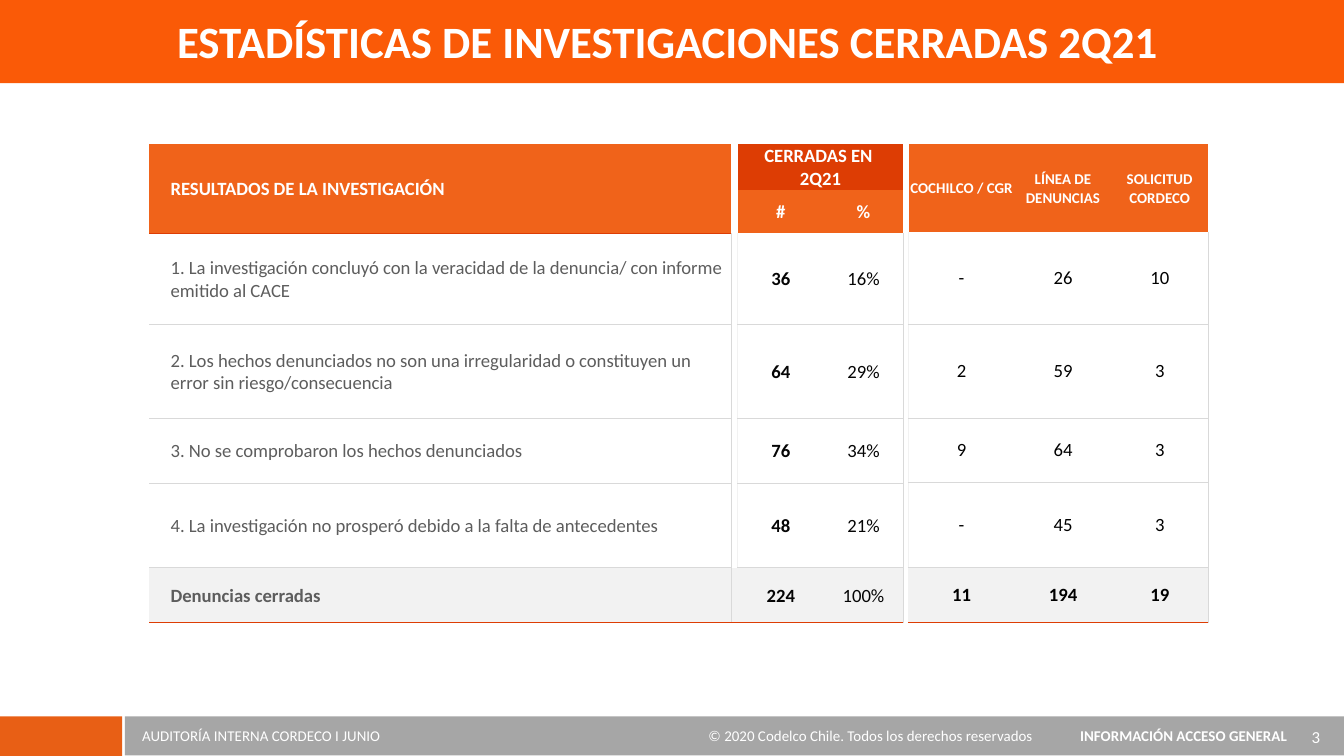
from dataclasses import dataclass

from lxml import etree
from pptx import Presentation
from pptx.dml.color import RGBColor
from pptx.enum.shapes import MSO_SHAPE
from pptx.enum.text import MSO_ANCHOR, PP_ALIGN
from pptx.oxml.ns import qn
from pptx.util import Inches, Pt

RECTANGLE = MSO_SHAPE.RECTANGLE
LEFT, CENTER = PP_ALIGN.LEFT, PP_ALIGN.CENTER
TOP, MIDDLE = MSO_ANCHOR.TOP, MSO_ANCHOR.MIDDLE
FONT = "Calibri"
WHITE, BLACK, INK, SLATE = "FFFFFF", "000000", "050505", "5D5D5D"
ORANGE, RED, PALE = "F0631A", "DD3D04", "F2F2F2"
GRID, ACCENT, TOTAL = ("D9D9D9", 0.25), (RED, 0.25), (RED, 0.75)
PALE_EDGE, HEADER_EDGE = (PALE, 0.75), ("BFBFBF", 0.5)
BODY_HEIGHTS = [0.68, 0.7, 0.48, 0.63, 0.41]


@dataclass
class Column:
    """One table column: its width, its body texts and how they look."""
    width: float
    texts: list[str]
    color: str = BLACK
    bold: bool = False
    bold_total: bool = True
    align: PP_ALIGN = CENTER
    insets: tuple = (0, 0, 0, 0)
    left: tuple | None = None
    right: tuple | None = None
    first_top: tuple | None = None
    ruled: bool = True


@dataclass
class Header:
    """One header cell, which may span several rows or columns."""
    row: int
    column: int
    text: str
    size: float
    fill: str = ORANGE
    rows: int = 1
    columns: int = 1
    align: PP_ALIGN = CENTER
    insets: tuple = (0.01, 0.01, 0.01, 0)
    right: tuple | None = None
    bottom: tuple | None = None


def rgb(color: str) -> RGBColor:
    """Turn a hex string into a colour."""
    return RGBColor.from_string(color)


def style(paragraph, size: float, color: str, bold: bool, align: PP_ALIGN) -> None:
    """Set the alignment and font of a paragraph."""
    paragraph.alignment = align
    font = paragraph.font
    font.name, font.size, font.bold = FONT, Pt(size), bold
    font.color.rgb = rgb(color)


def add_bar(slide, box: tuple, color: str, opacity: int = 100) -> None:
    """Draw a plain filled rectangle."""
    bar = slide.shapes.add_shape(RECTANGLE, *map(Inches, box))
    bar.shadow.inherit = False
    bar.line.fill.background()
    bar.fill.solid()
    bar.fill.fore_color.rgb = rgb(color)
    if opacity < 100:
        tint = bar.fill._xPr.find(".//" + qn("a:srgbClr"))
        etree.SubElement(tint, qn("a:alpha"), val=str(opacity * 1000))


def add_text(slide, box: tuple, text: str, size: float, align: PP_ALIGN = LEFT,
             bold: bool = False, anchor: MSO_ANCHOR = TOP,
             insets: tuple = (0.1, 0.05, 0.1, 0.05), tabs: tuple = (), ending: str = "") -> None:
    """Add white text, with optional right tab stops and a bold ending."""
    frame = slide.shapes.add_textbox(*map(Inches, box)).text_frame
    frame.word_wrap = True
    frame.vertical_anchor = anchor
    (frame.margin_left, frame.margin_top,
     frame.margin_right, frame.margin_bottom) = map(Inches, insets)
    paragraph = frame.paragraphs[0]
    if tabs:
        stops = etree.SubElement(paragraph._p.get_or_add_pPr(), qn("a:tabLst"))
        for position in tabs:
            etree.SubElement(stops, qn("a:tab"), pos=str(Inches(position)), algn="r")
    paragraph.add_run().text = text
    if ending:
        closing = paragraph.add_run()
        closing.text = ending
        closing.font.bold = True
    style(paragraph, size, WHITE, bold, align)


def fill_cell(cell, text: str, size: float, color: str, bold: bool, align: PP_ALIGN,
              insets: tuple, fill: str, edges: tuple) -> None:
    """Write and paint a cell; edges run left, right, top, bottom."""
    cell.text = text
    cell.vertical_anchor = MIDDLE
    (cell.margin_left, cell.margin_top,
     cell.margin_right, cell.margin_bottom) = map(Inches, insets)
    for paragraph in cell.text_frame.paragraphs:
        style(paragraph, size, color, bold, align)
    cell.fill.solid()
    cell.fill.fore_color.rgb = rgb(fill)
    properties = cell._tc.get_or_add_tcPr()
    for index, (side, edge) in enumerate(zip("LRTB", edges)):
        line = etree.Element(qn(f"a:ln{side}"))
        if edge:
            line.set("w", str(Pt(edge[1])))
            paint = etree.SubElement(line, qn("a:solidFill"))
            etree.SubElement(paint, qn("a:srgbClr"), val=edge[0])
        else:
            line.set("w", "0")
            etree.SubElement(line, qn("a:noFill"))
        properties.insert(index, line)


def add_results(slide, left: float, header_heights: list[float],
                headers: list[Header], columns: list[Column]) -> None:
    """Build a table from its header cells and body columns."""
    heights = header_heights + BODY_HEIGHTS
    width = sum(column.width for column in columns)
    table = slide.shapes.add_table(len(heights), len(columns), Inches(left), Inches(1.07),
                                   Inches(width), Inches(sum(heights))).table
    table.first_row = table.horz_banding = False
    for row, height in zip(table.rows, heights):
        row.height = Inches(height)
    start, last = len(header_heights), len(BODY_HEIGHTS) - 1
    for index, column in enumerate(columns):
        table.columns[index].width = Inches(column.width)
        for row in range(start):
            fill_cell(table.cell(row, index), "", 8, WHITE, True, CENTER,
                      (0, 0, 0, 0), WHITE, (None,) * 4)
        for row, text in enumerate(column.texts):
            is_total = row == last
            rule = GRID if column.ruled else None
            top = rule if row else column.first_top
            fill_cell(table.cell(start + row, index), text, 10, column.color,
                      column.bold_total if is_total else column.bold, column.align,
                      column.insets, PALE if is_total else WHITE,
                      (column.left, column.right, top, TOTAL if is_total else rule))
    for header in headers:
        cell = table.cell(header.row, header.column)
        if header.rows * header.columns > 1:
            cell.merge(table.cell(header.row + header.rows - 1,
                                  header.column + header.columns - 1))
        fill_cell(cell, header.text, header.size, WHITE, True, header.align, header.insets,
                  header.fill, (None, header.right, None, header.bottom))


def main() -> None:
    """Build the slide and save it."""
    deck = Presentation()
    deck.slide_width = Inches(10)
    deck.slide_height = deck.slide_width * 9 // 16
    slide = deck.slides.add_slide(deck.slide_layouts[6])

    add_bar(slide, (0, 5.33, 0.91, 0.3), "E75304", 93)
    add_bar(slide, (0.93, 5.33, 9.07, 0.29), "A6A6A6")
    add_text(slide, (9.53, 5.36, 0.52, 0.3), "3", 9, CENTER)
    add_text(slide, (5.1, 5.36, 4.59, 0.24),
             "\t© 2020 Codelco Chile. Todos los derechos reservados\t", 8,
             tabs=(2.49, 4.38), ending="INFORMACIÓN ACCESO GENERAL")
    add_text(slide, (0.96, 5.36, 1.99, 0.24), "AUDITORÍA INTERNA CORDECO I JUNIO", 8)
    add_bar(slide, (0, -0.01, 10.01, 0.63), "FA5A07")
    add_text(slide, (0.01, 0, 10.01, 0.6), "ESTADÍSTICAS DE INVESTIGACIONES CERRADAS 2Q21",
             24, CENTER, True, MIDDLE, (0, 0, 0.1, 0))

    label_insets, figure_insets = (0.16, 0.01, 0.04, 0), (0.01, 0.01, 0.01, 0)
    results = [
        "1. La investigación concluyó con la veracidad de la denuncia/ con informe emitido al CACE",
        "2. Los hechos denunciados no son una irregularidad o constituyen un error sin "
        "riesgo/consecuencia",
        "3. No se comprobaron los hechos denunciados",
        "4. La investigación no prosperó debido a la falta de antecedentes",
        "Denuncias cerradas",
    ]
    add_results(slide, 1.11, [0.34, 0.32], [
        Header(0, 0, "RESULTADOS DE LA INVESTIGACIÓN", 10, rows=2, align=LEFT,
               insets=label_insets, bottom=ACCENT),
        Header(0, 2, "CERRADAS EN \n2Q21", 10, RED, columns=2),
        Header(1, 2, "#", 10),
        Header(1, 3, "%", 10, right=HEADER_EDGE),
    ], [
        Column(4.33, results, SLATE, align=LEFT, insets=label_insets,
               right=GRID, first_top=ACCENT),
        Column(0.05, [""] * 5, left=GRID, right=PALE_EDGE, ruled=False),
        Column(0.64, ["36", "64", "76", "48", "224"], INK, True,
               insets=figure_insets, left=PALE_EDGE),
        Column(0.59, ["16%", "29%", "34%", "21%", "100%"], INK, bold_total=False,
               insets=figure_insets, right=GRID),
    ])
    add_results(slide, 6.76, [0.66], [
        Header(0, 0, "COCHILCO / CGR", 8, insets=(0, 0.01, 0, 0)),
        Header(0, 1, "LÍNEA DE DENUNCIAS", 8),
        Header(0, 2, "SOLICITUD CORDECO", 8, right=HEADER_EDGE),
    ], [
        Column(0.79, ["-", "2", "9", "-", "11"], left=PALE_EDGE),
        Column(0.72, ["26", "59", "64", "45", "194"]),
        Column(0.72, ["10", "3", "3", "3", "19"], right=GRID),
    ])
    deck.save("out.pptx")


if __name__ == "__main__":
    main()
